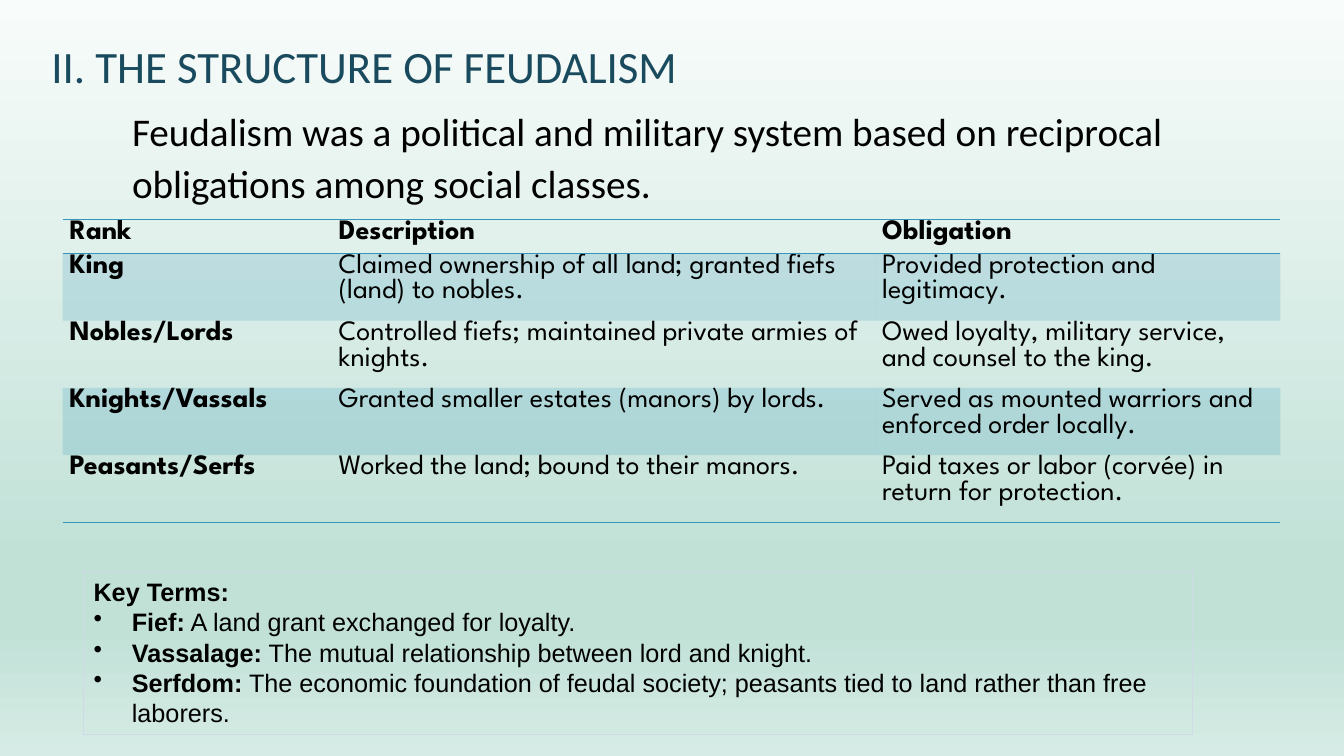
from dataclasses import dataclass

from lxml.etree import SubElement
from pptx import Presentation
from pptx.dml.color import RGBColor
from pptx.enum.shapes import MSO_SHAPE
from pptx.enum.text import MSO_ANCHOR, MSO_AUTO_SIZE, PP_ALIGN
from pptx.oxml import parse_xml
from pptx.oxml.ns import nsdecls, qn
from pptx.util import Pt

PX = 9144  # 100 px to the inch


@dataclass(frozen=True)
class Theme:
    title: str = "1A4A5D"
    ink: str = "000000"
    accent: str = "3494BA"
    frame: str = "CEDBE6"
    backdrop: tuple = ((0, "F8FCFB"), (74, "C1E1D7"), (83, "C1E1D7"), (100, "D6EBE5"))
    heading_font: str = "Calibri"
    table_font: str = "League Spartan"
    terms_font: str = "Arial"
    title_size: int = 32
    intro_size: int = 28
    table_size: int = 20
    terms_size: int = 18


THEME = Theme()


def box(left, top, width, height):
    return [n * PX for n in (left, top, width, height)]


def style(paragraph, name, size, color, bold=None):
    font = paragraph.font
    font.name, font.size, font.bold = name, Pt(size), bold
    font.color.rgb = RGBColor.from_string(color)


prs = Presentation()
prs.slide_width, prs.slide_height = 1333 * PX, 750 * PX
slide = prs.slides.add_slide(prs.slide_layouts[5])

# Background gradient, top to bottom
backdrop = slide.background.fill
backdrop.gradient()
backdrop.gradient_angle = 270
stops = slide.element.find(".//" + qn("a:gsLst"))
for stop in list(stops):
    stops.remove(stop)
for position, color in THEME.backdrop:
    stop = SubElement(stops, qn("a:gs"), pos=str(position * 1000))
    SubElement(stop, qn("a:srgbClr"), val=color)

# Title
title = slide.shapes.title
title.left, title.top, title.width, title.height = box(41, 23, 1067, 74)
title.text_frame.text = "II. THE STRUCTURE OF FEUDALISM"
title.text_frame.vertical_anchor = MSO_ANCHOR.BOTTOM
title.text_frame.auto_size = MSO_AUTO_SIZE.NONE
heading = title.text_frame.paragraphs[0]
heading.alignment = PP_ALIGN.LEFT
heading.line_spacing = 0.9
style(heading, THEME.heading_font, THEME.title_size, THEME.title)

# Introduction
intro = slide.shapes.add_textbox(*box(116, 97, 1067, 125)).text_frame
intro.word_wrap = True
intro.margin_left = 15 * PX
intro.text = ("Feudalism was a political and military system based on "
              "reciprocal obligations among social classes.")
intro.paragraphs[0].line_spacing = 1.1
style(intro.paragraphs[0], THEME.heading_font, THEME.intro_size, THEME.ink)

# Table of ranks
RANKS = [
    ("Rank", "Description", "Obligation"),
    ("King", "Claimed ownership of all land; granted fiefs (land) to nobles.",
     "Provided protection and legitimacy."),
    ("Nobles/Lords", "Controlled fiefs; maintained private armies of knights.",
     "Owed loyalty, military service, and counsel to the king."),
    ("Knights/Vassals", "Granted smaller estates (manors) by lords.",
     "Served as mounted warriors and enforced order locally."),
    ("Peasants/Serfs", "Worked the land; bound to their manors.",
     "Paid taxes or labor (corvée) in return for protection."),
]
COLUMN_WIDTHS = (267, 539, 402)
HEADER_HEIGHT, RANK_HEIGHT = 25, 51
last = len(RANKS) - 1
ranks_frame = slide.shapes.add_table(
    len(RANKS), len(COLUMN_WIDTHS),
    *box(62, 218, sum(COLUMN_WIDTHS), HEADER_HEIGHT + last * RANK_HEIGHT))
ranks = ranks_frame.table
ranks.first_row = ranks.horz_banding = False
no_style = "{2D5ABB26-0587-4C30-8999-92F81FD0307C}"
ranks_frame.element.find(".//" + qn("a:tableStyleId")).text = no_style
for column, width in zip(ranks.columns, COLUMN_WIDTHS):
    column.width = width * PX

for r, entries in enumerate(RANKS):
    ranks.rows[r].height = (RANK_HEIGHT if r else HEADER_HEIGHT) * PX
    edges = {0: ("lnB", "lnT"), last: ("lnB",)}.get(r, ())
    for c, entry in enumerate(entries):
        cell = ranks.cell(r, c)
        cell.text = entry
        cell.margin_left = cell.margin_right = 7 * PX
        cell.margin_top = cell.margin_bottom = 0
        style(cell.text_frame.paragraphs[0], THEME.table_font, THEME.table_size,
              THEME.ink, r == 0 or c == 0)
        properties = cell._tc.get_or_add_tcPr()
        if r % 2:  # tinted band
            cell.fill.solid()
            cell.fill.fore_color.rgb = RGBColor.from_string(THEME.accent)
            tint = properties.find(".//" + qn("a:srgbClr"))
            SubElement(tint, qn("a:alpha"), val="20000")
        else:
            cell.fill.background()
        for edge in edges:
            properties.insert(0, parse_xml(
                f'<a:{edge} {nsdecls("a")} w="12700"><a:solidFill>'
                f'<a:srgbClr val="{THEME.accent}"/></a:solidFill></a:{edge}>'))

# Key terms
TERMS = [
    ("Key Terms:", ""),
    ("Fief:", " A land grant exchanged for loyalty."),
    ("Vassalage:", " The mutual relationship between lord and knight."),
    ("Serfdom:", " The economic foundation of feudal society; peasants tied to land "
                 "rather than free laborers."),
]
key_terms = slide.shapes.add_shape(MSO_SHAPE.RECTANGLE, *box(83, 567, 1100, 162))
key_terms.shadow.inherit = False
key_terms.fill.background()
key_terms.line.color.rgb = RGBColor.from_string(THEME.frame)
key_terms.line.width = Pt(0.75)
terms = key_terms.text_frame
terms.word_wrap = True
terms.vertical_anchor = MSO_ANCHOR.TOP
for i, (term, meaning) in enumerate(TERMS):
    line = terms.add_paragraph() if i else terms.paragraphs[0]
    line.alignment = PP_ALIGN.LEFT
    style(line, THEME.terms_font, THEME.terms_size, THEME.ink)
    name = line.add_run()
    name.text = term
    name.font.bold = True
    if meaning:
        line.add_run().text = meaning
        bullet = line._p.get_or_add_pPr()
        bullet.set("marL", str(38 * PX))
        bullet.set("indent", str(-38 * PX))
        bullet.insert(0, parse_xml(f'<a:buChar {nsdecls("a")} char="•"/>'))

prs.save("out.pptx")
